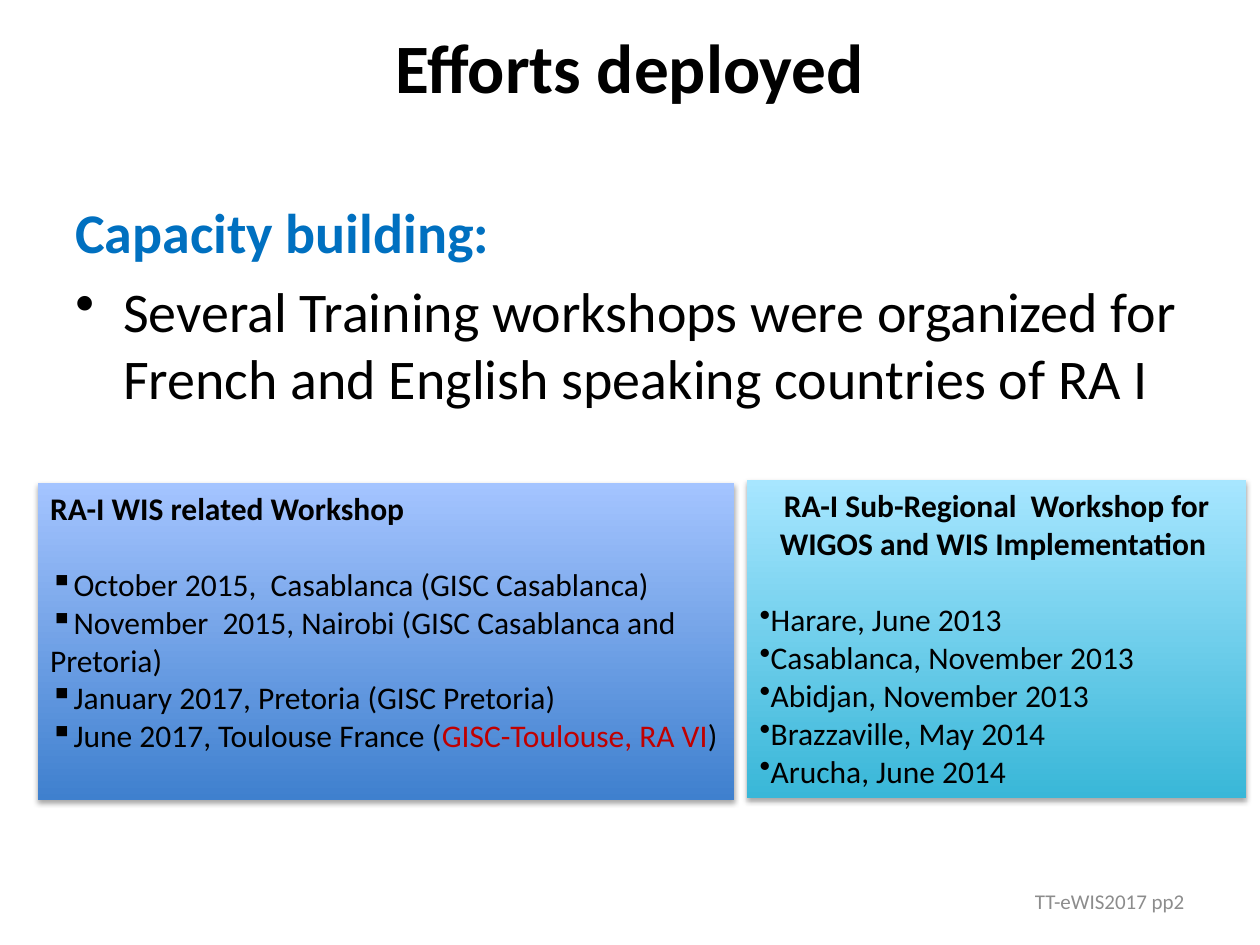
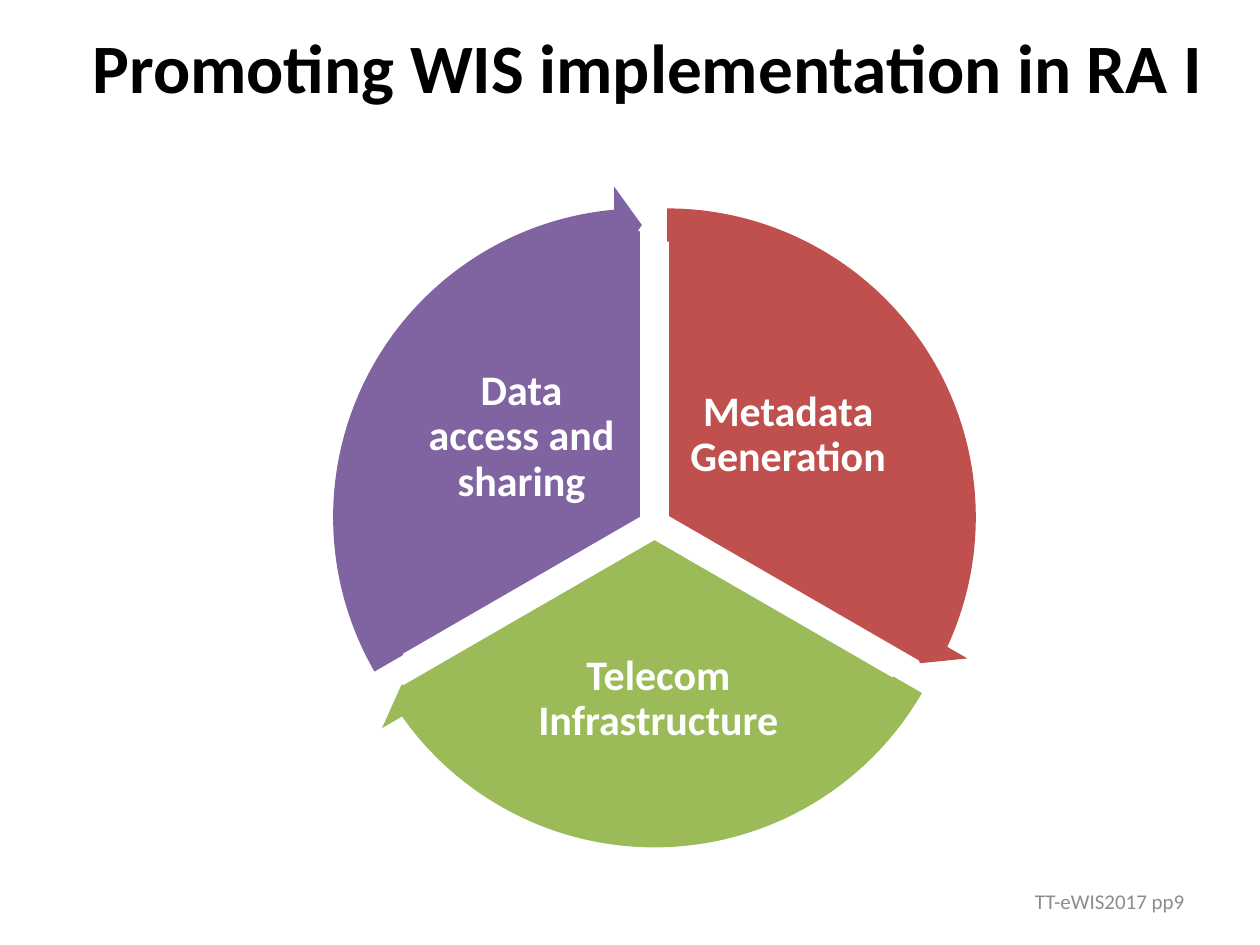
from lxml import etree
from pptx import Presentation
from pptx.dml.color import RGBColor
from pptx.enum import shapes, text
from pptx.oxml import ns
from pptx.util import Inches, Pt

FONT = "Calibri"
BLACK, WHITE, GREY, BLUE, RED = "000000", "FFFFFF", "8C8C8C", "0070C0", "C00000"
LEFT, MID, RIGHT = text.PP_ALIGN.LEFT, text.PP_ALIGN.CENTER, text.PP_ALIGN.RIGHT
LINE = 22  # height in points of one 18 pt line

WIS = ["October 2015,  Casablanca (GISC Casablanca)",
       "November  2015, Nairobi (GISC Casablanca and Pretoria)",
       "January 2017, Pretoria (GISC Pretoria)",
       [("June 2017, Toulouse France (", BLACK),
        ("GISC-Toulouse, RA VI", RED), (")", BLACK)]]
WIGOS = ["Harare, June 2013", "Casablanca, November 2013",
         "Abidjan, November 2013", "Brazzaville, May 2014", "Arucha, June 2014"]

# label, colour, pie place, label place, arrow corner
PARTS = [
    ("Metadata Generation", "C0504D", (2.95, 1.76, 4.69, 4.69),
     (5.42, 2.76, 1.67, 1.39), (2.66, 1.47)),
    ("Telecom Infrastructure", "9BBB59", (2.87, 1.98, 4.65, 4.58),
     (3.98, 4.95, 2.49, 1.2), (2.56, 1.64)),
    ("Data access and sharing", "8064A2", (2.77, 1.82, 4.65, 4.58),
     (3.31, 2.79, 1.66, 1.36), (2.46, 1.47)),
]


def rgb(code):
    return RGBColor.from_string(code)


def place(box):
    return [Inches(n) for n in box]


def add_bullet(para, char, indent):
    props = para._p.get_or_add_pPr()
    props.set("marL", str(Inches(indent)))
    props.set("indent", str(-Inches(indent)))
    etree.SubElement(props, ns.qn("a:buChar")).set("char", char)


def write(frame, words, size, color=BLACK, bold=False, align=LEFT,
          bullet=None, indent=0, before=0):
    """Add a paragraph; words is a string or a list of (string, colour)."""
    para = frame.paragraphs[0]
    if para.runs:
        para = frame.add_paragraph()
    if bullet:
        add_bullet(para, bullet, indent)
    if before:
        para.space_before = Pt(before)
    para.alignment = align
    font = para.font
    font.name, font.size, font.bold = FONT, Pt(size), bold
    if isinstance(words, str):
        para.add_run().text = words
        font.color.rgb = rgb(color)
    else:
        for part, tint in words:
            run = para.add_run()
            run.text = part
            run.font.color.rgb = rgb(tint)
    return para


def add_text(slide, box, middle=True, inset=None):
    frame = slide.shapes.add_textbox(*place(box)).text_frame
    frame.word_wrap = True
    if middle:
        frame.vertical_anchor = text.MSO_ANCHOR.MIDDLE
    if inset is not None:
        frame.margin_left = frame.margin_right = Inches(inset)
        frame.margin_top = frame.margin_bottom = Inches(inset)
    return frame


def add_slide(deck, title, page, width=9):
    slide = deck.slides.add_slide(deck.slide_layouts[5])
    head = slide.shapes.title
    head.left, head.top, head.width, head.height = place((0.5, 0.22, width, 0.61))
    frame = head.text_frame
    frame.auto_size = text.MSO_AUTO_SIZE.NONE
    frame.vertical_anchor = text.MSO_ANCHOR.MIDDLE
    write(frame, title, 39.6, bold=True, align=MID)
    foot = add_text(slide, (7.17, 6.95, 2.33, 0.4))
    write(foot, f"TT-eWIS2017 pp{page}", 12, GREY, align=RIGHT)
    return slide


def add_shade(shape):
    shape.shadow.inherit = False
    effects = shape._element.spPr.find(ns.qn("a:effectLst"))
    shade = etree.SubElement(effects, ns.qn("a:outerShdw"), blurRad=str(Pt(3.1)),
                             dist=str(Pt(1.8)), dir="5400000", rotWithShape="0")
    tint = etree.SubElement(shade, ns.qn("a:srgbClr"), val=BLACK)
    etree.SubElement(tint, ns.qn("a:alpha"), val="35000")


def add_panel(slide, box, colors, title, align, bullet, items):
    panel = slide.shapes.add_shape(shapes.MSO_SHAPE.RECTANGLE, *place(box))
    panel.line.fill.background()
    panel.fill.gradient()
    panel.fill.gradient_angle = 90
    for stop, color in zip(panel.fill.gradient_stops, colors):
        stop.color.rgb = rgb(color)
    add_shade(panel)
    frame = panel.text_frame
    frame.word_wrap = True
    frame.vertical_anchor = text.MSO_ANCHOR.TOP
    write(frame, title, 18, bold=True, align=align)
    for i, item in enumerate(items):
        write(frame, item, 18, bullet=bullet, before=0 if i else LINE)


def add_arc(slide, kind, box, color, adjust, edge=None):
    arc = slide.shapes.add_shape(kind, *place(box))
    for i, value in enumerate(adjust):
        arc.adjustments[i] = value
    arc.shadow.inherit = False
    arc.fill.solid()
    arc.fill.fore_color.rgb = rgb(color)
    if edge:
        arc.line.color.rgb = rgb(edge)
        arc.line.width = Pt(2)
    else:
        arc.line.fill.background()


def add_cycle(slide):
    """Draw three pie thirds with labels, then an arrow round each."""
    third, full = 72, 216  # angles in units of 5/3 degree
    for i, (label, color, pie, box, _) in enumerate(PARTS):
        start = (162 + third * i) % full
        add_arc(slide, shapes.MSO_SHAPE.PIE, pie, color,
                (start, (start + third) % full), WHITE)
        frame = add_text(slide, box, inset=0.03)
        para = write(frame, label, 24, WHITE, bold=True, align=MID)
        para.line_spacing = 0.9
    for i, (_, color, _, _, corner) in enumerate(PARTS):
        add_arc(slide, shapes.MSO_SHAPE.CIRCULAR_ARROW, (*corner, 5.27, 5.27), color,
                (0.05, 3.28, 14.72 + third * i, (162 + third * i) % full, 0.06))


def main():
    deck = Presentation()
    deck.slide_width, deck.slide_height = Inches(10), Inches(7.5)

    efforts = add_slide(deck, "Efforts deployed", 2)
    body = add_text(efforts, (0.5, 1.52, 9, 1.93), middle=False)
    write(body, "Capacity building:", 32, BLUE, bold=True)
    write(body, "Several Training workshops were organized for French and "
          "English speaking countries of RA I", 32, bullet="•", indent=0.38, before=6.4)
    add_panel(efforts, (5.93, 3.81, 3.96, 2.52), ("39B7D8", "A7E6FF"),
              "RA-I Sub-Regional  Workshop for WIGOS and WIS Implementation ",
              MID, "•", WIGOS)
    add_panel(efforts, (0.3, 3.83, 5.53, 2.52), ("3F80CE", "A4C4FF"),
              "RA-I WIS related Workshop", LEFT, "▪", WIS)

    add_cycle(add_slide(deck, "Promoting WIS implementation in RA I", 9, 9.28))
    deck.save("out.pptx")


if __name__ == "__main__":
    main()
